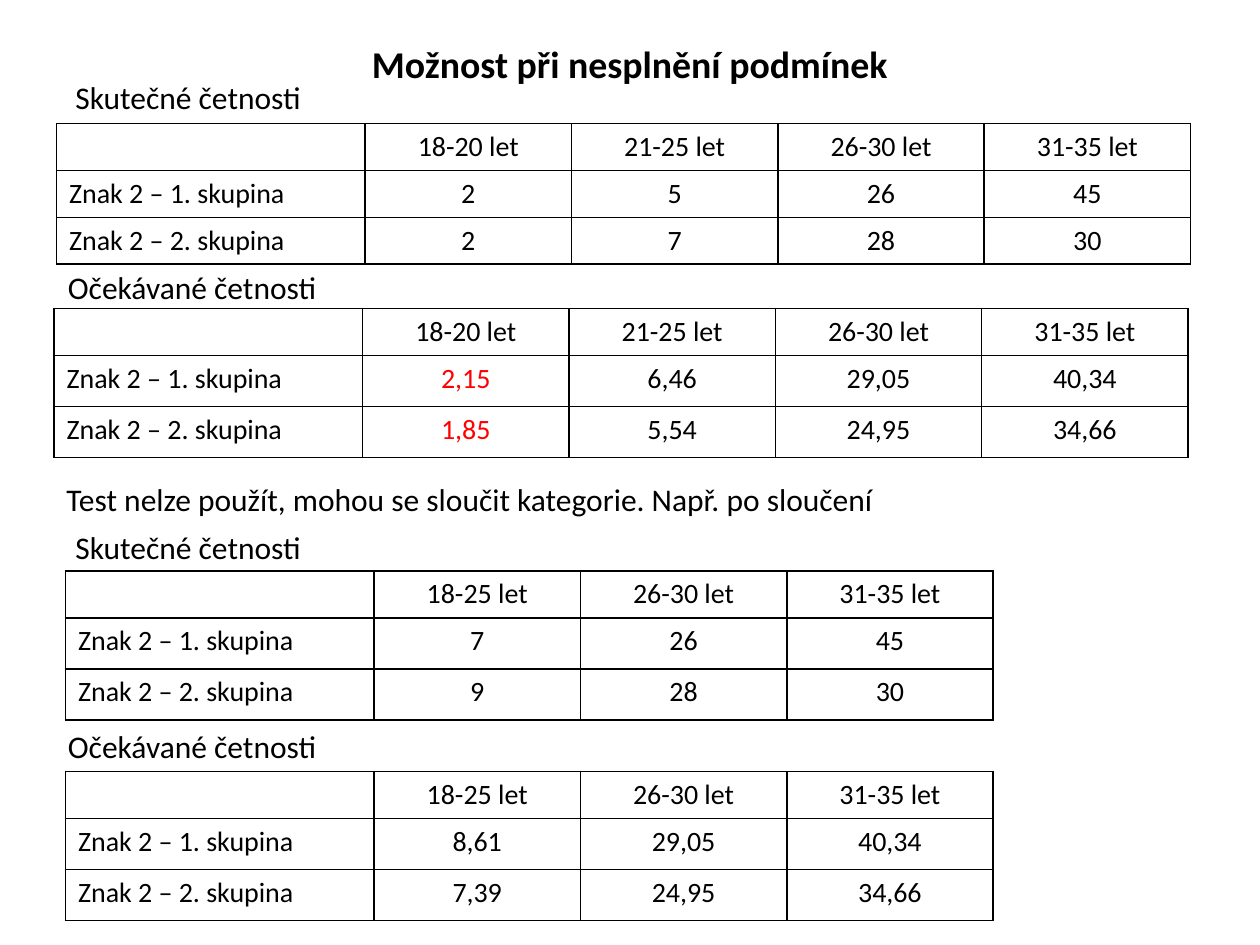
from dataclasses import dataclass

from lxml.etree import SubElement
from pptx import Presentation
from pptx.dml.color import RGBColor
from pptx.enum.text import MSO_ANCHOR, MSO_AUTO_SIZE, PP_ALIGN
from pptx.oxml.ns import qn
from pptx.slide import Slide
from pptx.table import _Cell
from pptx.text.text import _Paragraph
from pptx.util import Cm, Pt

FONT = "Calibri"
BLACK = "000000"
RED = "FF0000"
LABEL_WIDTH = 6.22
VALUE_WIDTH = 4.16
HEADER_HEIGHT = 0.94
GROUPS = ("Znak 2 – 1. skupina", "Znak 2 – 2. skupina")
AGES = ("18-20 let", "21-25 let", "26-30 let", "31-35 let")
MERGED_AGES = ("18-25 let", *AGES[2:])
OBSERVED = "Skutečné četnosti"
EXPECTED = "Očekávané četnosti"


@dataclass(frozen=True)
class Caption:
    text: str
    left: float
    top: float
    width: float
    wrap: bool


@dataclass(frozen=True)
class FrequencyTable:
    left: float
    top: float
    row_height: float
    ages: tuple[str, ...]
    counts: tuple[tuple[str, ...], tuple[str, ...]]
    too_small: tuple[str, ...] = ()


CAPTIONS = (
    Caption(OBSERVED, 1.27, 1.45, 5.11, False),
    Caption(EXPECTED, 1.12, 5.28, 5.59, False),
    Caption("Test nelze použít, mohou se sloučit kategorie. Např. po sloučení",
            1.09, 9.55, 16.81, False),
    Caption(OBSERVED, 1.27, 10.52, 12.7, True),
    Caption(EXPECTED, 1.12, 14.53, 12.7, True),
)

TABLES = (
    FrequencyTable(1.14, 2.49, HEADER_HEIGHT, AGES,
                   (("2", "5", "26", "45"), ("2", "7", "28", "30"))),
    FrequencyTable(1.09, 6.22, 1.03, AGES,
                   (("2,15", "6,46", "29,05", "40,34"),
                    ("1,85", "5,54", "24,95", "34,66")),
                   ("2,15", "1,85")),
    FrequencyTable(1.32, 11.51, 1.03, MERGED_AGES,
                   (("7", "26", "45"), ("9", "28", "30"))),
    FrequencyTable(1.32, 15.55, 1.03, MERGED_AGES,
                   (("8,61", "29,05", "40,34"), ("7,39", "24,95", "34,66"))),
)


def rgb(color: str) -> RGBColor:
    return RGBColor.from_string(color)


def add_text(para: _Paragraph, text: str, size: float,
             color: str = BLACK, bold: bool = False) -> None:
    span = para.add_run()
    span.text = text
    span.font.name = FONT
    span.font.size = Pt(size)
    span.font.bold = bold
    span.font.color.rgb = rgb(color)


def add_borders(cell: _Cell) -> None:
    properties = cell._tc.get_or_add_tcPr()
    for side in ("a:lnL", "a:lnR", "a:lnT", "a:lnB"):
        line = SubElement(properties, qn(side), w=str(Pt(1)))
        fill = SubElement(line, qn("a:solidFill"))
        SubElement(fill, qn("a:srgbClr"), val=BLACK)


def fill_cell(cell: _Cell, text: str, align: PP_ALIGN, color: str) -> None:
    add_borders(cell)
    cell.fill.background()
    para = cell.text_frame.paragraphs[0]
    para.alignment = align
    if text:
        add_text(para, text, 16, color)
    else:
        SubElement(para._p, qn("a:endParaRPr"), sz="1600")


def add_frequency_table(page: Slide, data: FrequencyTable) -> None:
    rows = [("", *data.ages)]
    rows += [(group, *counts) for group, counts in zip(GROUPS, data.counts)]
    widths = [LABEL_WIDTH] + [VALUE_WIDTH] * len(data.ages)
    heights = [HEADER_HEIGHT] + [data.row_height] * len(GROUPS)
    table = page.shapes.add_table(
        len(rows), len(widths), Cm(data.left), Cm(data.top),
        Cm(sum(widths)), Cm(sum(heights))).table
    table.first_row = False
    table.horz_banding = False
    for column, width in zip(table.columns, widths):
        column.width = Cm(width)
    for row, height, texts in zip(table.rows, heights, rows):
        row.height = Cm(height)
        for index, (cell, text) in enumerate(zip(row.cells, texts)):
            align = PP_ALIGN.CENTER if index else PP_ALIGN.LEFT
            fill_cell(cell, text, align, RED if text in data.too_small else BLACK)


def add_caption(page: Slide, caption: Caption) -> None:
    box = page.shapes.add_textbox(
        Cm(caption.left), Cm(caption.top), Cm(caption.width), Cm(1.03))
    frame = box.text_frame
    frame.word_wrap = caption.wrap
    frame.auto_size = MSO_AUTO_SIZE.SHAPE_TO_FIT_TEXT
    add_text(frame.paragraphs[0], caption.text, 18)


def set_title(page: Slide, text: str) -> None:
    title = page.shapes.title
    title.left, title.top = Cm(1.27), Cm(0.76)
    title.width, title.height = Cm(22.86), Cm(1.02)
    frame = title.text_frame
    frame.vertical_anchor = MSO_ANCHOR.MIDDLE
    frame.auto_size = MSO_AUTO_SIZE.NONE
    para = frame.paragraphs[0]
    para.alignment = PP_ALIGN.CENTER
    add_text(para, text, 21.6, bold=True)


def main() -> None:
    deck = Presentation()
    deck.slide_width, deck.slide_height = Cm(25.4), Cm(19.05)
    page = deck.slides.add_slide(deck.slide_layouts[5])
    set_title(page, "Možnost při nesplnění podmínek")
    for data in TABLES:
        add_frequency_table(page, data)
    for caption in CAPTIONS:
        add_caption(page, caption)
    deck.save("out.pptx")


if __name__ == "__main__":
    main()
